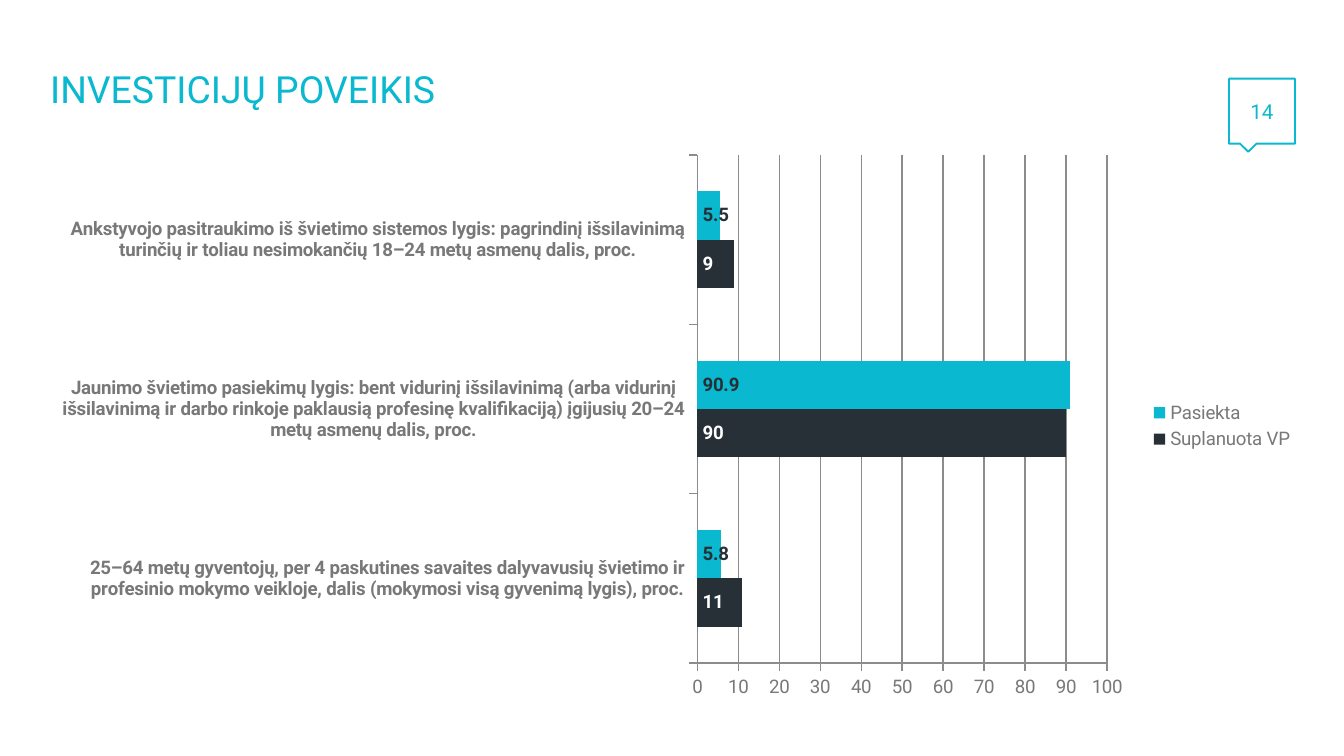
"""Build the slide on the impact of investments: title, page callout and bar chart."""
from lxml import etree
from pptx import Presentation
from pptx.chart.data import CategoryChartData
from pptx.dml.color import RGBColor
from pptx.enum.chart import XL_CHART_TYPE, XL_LABEL_POSITION, XL_LEGEND_POSITION, XL_TICK_MARK
from pptx.enum.shapes import MSO_SHAPE
from pptx.enum.text import MSO_ANCHOR, MSO_AUTO_SIZE, PP_ALIGN
from pptx.oxml.ns import qn
from pptx.util import Inches, Pt

BAR = XL_CHART_TYPE.BAR_CLUSTERED
INSIDE_BASE = XL_LABEL_POSITION.INSIDE_BASE
RIGHT = XL_LEGEND_POSITION.RIGHT
OUTSIDE, NO_TICK = XL_TICK_MARK.OUTSIDE, XL_TICK_MARK.NONE
CALLOUT = MSO_SHAPE.RECTANGULAR_CALLOUT
MIDDLE = MSO_ANCHOR.MIDDLE
FIT_SHAPE, NO_FIT = MSO_AUTO_SIZE.SHAPE_TO_FIT_TEXT, MSO_AUTO_SIZE.NONE
LEFT, CENTER = PP_ALIGN.LEFT, PP_ALIGN.CENTER

THEME = {
    "font": "Roboto",
    "accent": RGBColor.from_string("0AB8D0"),
    "dark": RGBColor.from_string("272F37"),
    "white": RGBColor.from_string("FFFFFF"),
    "muted": RGBColor.from_string("787878"),
    "grid": RGBColor.from_string("8C8C8C"),
    "title": Pt(20),
    "number": Pt(11),
    "chart": Pt(10),
}
CATEGORIES = [
    "25–64 metų gyventojų, per 4 paskutines savaites dalyvavusių švietimo ir "
    "profesinio mokymo veikloje, dalis (mokymosi visą gyvenimą lygis), proc.",
    "Jaunimo švietimo pasiekimų lygis: bent vidurinį išsilavinimą (arba vidurinį "
    "išsilavinimą ir darbo rinkoje paklausią profesinę kvalifikaciją) įgijusių 20–24 "
    "metų asmenų dalis, proc.",
    "Ankstyvojo pasitraukimo iš švietimo sistemos lygis: pagrindinį išsilavinimą "
    "turinčių ir toliau nesimokančių 18–24 metų asmenų dalis, proc.",
]
SERIES = [
    ("Suplanuota VP", (11, 90, 9), "dark", "white"),
    ("Pasiekta", (5.8, 90.9, 5.5), "accent", "dark"),
]
PLOT = {"xMode": "edge", "yMode": "edge", "x": 0.52, "y": 0.02, "w": 10 / 31, "h": 0.9}

prs = Presentation()
prs.slide_width, prs.slide_height = Inches(10), Inches(10 * 9 / 16)
COL, ROW = prs.slide_width / 100, prs.slide_height / 100
s = prs.slides.add_slide(prs.slide_layouts[6])


def place(x, y, w, h):
    """Turn percent of the slide into lengths."""
    return int(x * COL), int(y * ROW), int(w * COL), int(h * ROW)


def assign(obj, values):
    """Set each attribute from a dict of format values."""
    for name, value in values.items():
        setattr(obj, name, value)


data = CategoryChartData()
data.categories = CATEGORIES
for name, values, _, _ in SERIES:
    data.add_series(name, values)
chart = s.shapes.add_chart(BAR, *place(2.75, 19, 94.5, 74.7), data).chart
assign(chart, {"has_title": False, "has_legend": True})
assign(chart.legend, {"position": RIGHT, "include_in_layout": False})
assign(chart.font, {"name": THEME["font"], "size": THEME["chart"]})
chart.font.color.rgb = THEME["muted"]

area = chart.plots[0]
assign(area, {"gap_width": 150, "overlap": 0, "vary_by_categories": False})
for ser, (_, _, fill, ink) in zip(area.series, SERIES):
    ser.format.fill.solid()
    ser.format.fill.fore_color.rgb = THEME[fill]
    labels = ser.data_labels
    assign(labels, {"show_value": True, "position": INSIDE_BASE})
    assign(labels.font, {"name": THEME["font"], "size": THEME["chart"], "bold": True})
    labels.font.color.rgb = THEME[ink]

cat_axis, val_axis = chart.category_axis, chart.value_axis
assign(cat_axis, {"has_major_gridlines": False})
assign(val_axis, {"has_major_gridlines": True, "minimum_scale": 0,
                  "maximum_scale": 100, "major_unit": 10})
for axis, bold in ((cat_axis, True), (val_axis, False)):
    assign(axis, {"major_tick_mark": OUTSIDE, "minor_tick_mark": NO_TICK})
    assign(axis.tick_labels.font, {"name": THEME["font"], "size": THEME["chart"], "bold": bold})
    axis.tick_labels.font.color.rgb = THEME["muted"]
for line in (cat_axis.format.line, val_axis.format.line, val_axis.major_gridlines.format.line):
    line.width = Pt(0.75)
    line.color.rgb = THEME["grid"]

plot_area = chart.element.find(".//" + qn("c:plotArea"))
for old in plot_area.findall(qn("c:layout")):
    plot_area.remove(old)
layout = etree.Element(qn("c:layout"))
manual = etree.SubElement(layout, qn("c:manualLayout"))
for tag, value in {"layoutTarget": "inner", **PLOT}.items():
    etree.SubElement(manual, qn("c:" + tag)).set("val", str(value))
plot_area.insert(0, layout)

callout = s.shapes.add_shape(CALLOUT, *place(91.45, 10.4, 4.9, 8.6))
callout.shadow.inherit = False
callout.fill.background()
callout.line.width = Pt(1)
callout.line.color.rgb = THEME["accent"]
title = s.shapes.add_textbox(*place(2.75, 8.25, 33.4, 7.65))

TEXTS = [
    (callout, "14", "number", (0.14, 0.15), CENTER, 1.0, False, FIT_SHAPE),
    (title, "INVESTICIJŲ POVEIKIS", "title", (0.1, 0.05), LEFT, 0.9, True, NO_FIT),
]
for sp, text, size, (side, edge), align, spacing, wrap, fit in TEXTS:
    tf = sp.text_frame
    assign(tf, {"word_wrap": wrap, "auto_size": fit, "vertical_anchor": MIDDLE,
                "margin_left": Inches(side), "margin_right": Inches(side),
                "margin_top": Inches(edge), "margin_bottom": Inches(edge)})
    p = tf.paragraphs[0]
    assign(p, {"alignment": align, "line_spacing": spacing})
    r = p.add_run()
    r.text = text
    assign(r.font, {"name": THEME["font"], "size": THEME[size]})
    r.font.color.rgb = THEME["accent"]

prs.save("out.pptx")
